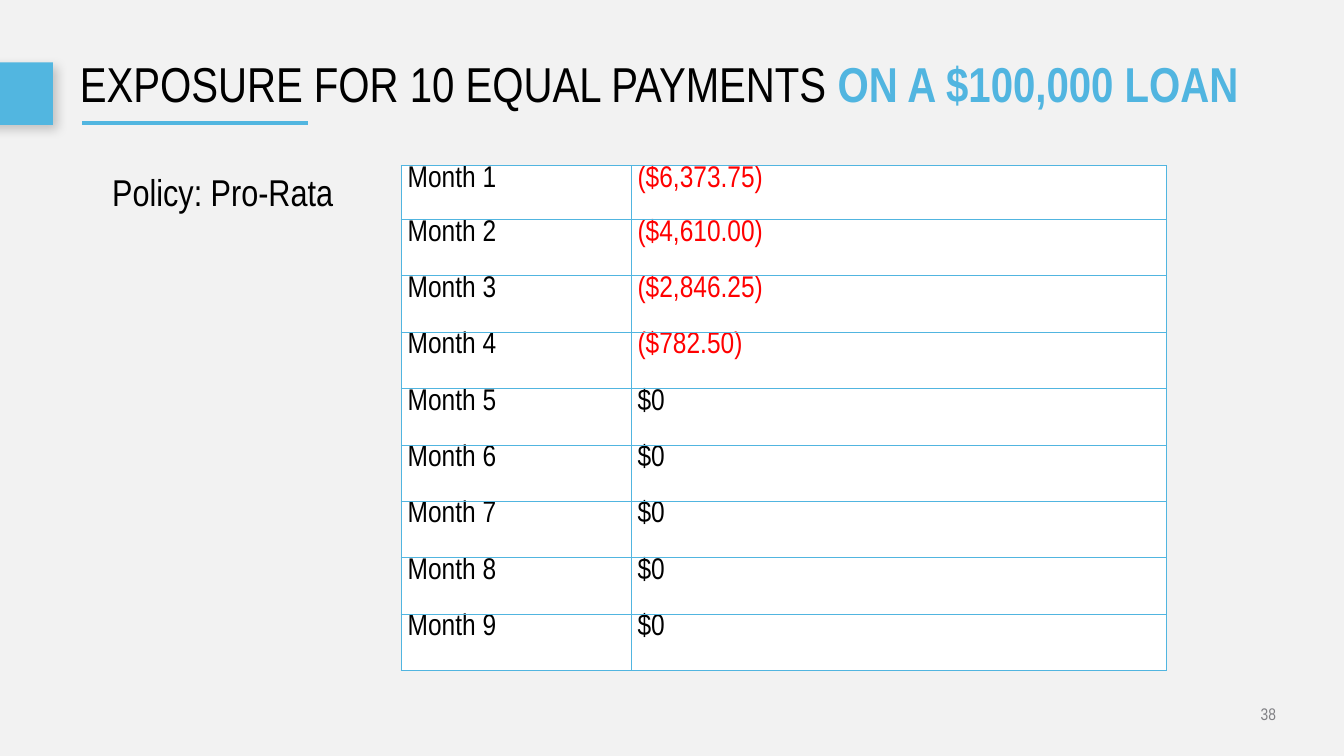
from lxml import etree
from pptx import Presentation
from pptx import util as u
from pptx.dml.color import RGBColor
from pptx.enum import shapes, text
from pptx.oxml import ns, parse_xml

HUES = {"back": "F2F2F2", "bar": "52B6E0", "blue": "51B5E0", "ink": "000000",
        "red": "FF0000", "grey": "808084", "white": "FFFFFF"}
FONT = "Arial Narrow"
LOSSES = ["($6,373.75)", "($4,610.00)", "($2,846.25)", "($782.50)"]
ROWS = [(f"Month {n + 1}", LOSSES[n] if n < len(LOSSES) else "$0") for n in range(9)]


class Deck:
    def __init__(self, wide, high):
        self.prs = Presentation()
        self.prs.slide_width, self.prs.slide_height = u.Cm(wide), u.Cm(high)
        self.slide = self.prs.slides.add_slide(self.prs.slide_layouts[5])
        self.paint(self.slide.background.fill, "back")

    def hue(self, name):
        return RGBColor.from_string(HUES[name])

    def paint(self, fill, name):
        fill.solid()
        fill.fore_color.rgb = self.hue(name)

    def style(self, run, size, name, bold=False):
        run.font.name, run.font.size, run.font.bold = FONT, u.Pt(size), bold
        run.font.color.rgb = self.hue(name)

    def inset(self, item, side, top):
        item.margin_left = item.margin_right = u.Cm(side)
        item.margin_top = item.margin_bottom = u.Cm(top)

    def title(self, box, size, parts):
        head = self.slide.shapes.title
        head.left, head.top, head.width, head.height = map(u.Cm, box)
        frame = head.text_frame
        self.inset(frame, 0, 0)
        frame.word_wrap = True
        frame.auto_size = text.MSO_AUTO_SIZE.NONE
        frame.vertical_anchor = text.MSO_ANCHOR.MIDDLE
        para = frame.paragraphs[0]
        para.alignment, para.line_spacing = text.PP_ALIGN.LEFT, 0.9
        for words, name, bold in parts:
            run = para.add_run()
            run.text = words
            self.style(run, size, name, bold)

    def block(self, box, name):
        rect = self.slide.shapes.add_shape(shapes.MSO_SHAPE.RECTANGLE, *map(u.Cm, box))
        self.paint(rect.fill, name)
        rect.line.fill.background()
        rect.shadow.inherit = False
        glow = rect._element.spPr.find(ns.qn("a:effectLst"))
        glow.append(parse_xml(
            f'<a:outerShdw {ns.nsdecls("a")} blurRad="{u.Pt(12)}" dist="{u.Pt(7)}" '
            f'dir="2700000" algn="tl" rotWithShape="0"><a:srgbClr val="{HUES["ink"]}">'
            '<a:alpha val="20000"/></a:srgbClr></a:outerShdw>'))

    def rule(self, ends, name, width):
        line = self.slide.shapes.add_connector(
            shapes.MSO_CONNECTOR.STRAIGHT, *map(u.Cm, ends))
        line.line.color.rgb = self.hue(name)
        line.line.width = u.Pt(width)
        etree.SubElement(line._element.spPr, ns.qn("a:effectLst"))

    def label(self, box, words, size, name, align="LEFT", anchor="TOP", pad=(0.25, 0.13)):
        frame = self.slide.shapes.add_textbox(*map(u.Cm, box)).text_frame
        frame.word_wrap = True
        self.inset(frame, *pad)
        frame.vertical_anchor = text.MSO_ANCHOR[anchor]
        frame.text = words
        para = frame.paragraphs[0]
        para.alignment = text.PP_ALIGN[align]
        self.style(para.runs[0], size, name)

    def edge(self, cell, name, width):
        props = cell._tc.get_or_add_tcPr()
        for spot, side in enumerate("LRTB"):
            props.insert(spot, parse_xml(
                f'<a:ln{side} {ns.nsdecls("a")} w="{u.Pt(width)}"><a:solidFill>'
                f'<a:srgbClr val="{HUES[name]}"/></a:solidFill></a:ln{side}>'))

    def table(self, spot, cols, highs, rows, size):
        box = (*spot, sum(cols), sum(highs))
        grid = self.slide.shapes.add_table(len(rows), len(cols), *map(u.Cm, box)).table
        grid.first_row = grid.horz_banding = False
        for col, wide in zip(grid.columns, cols):
            col.width = u.Cm(wide)
        for row, high, words in zip(grid.rows, highs, rows):
            row.height = u.Cm(high)
            for cell, word in zip(row.cells, words):
                cell.text = word
                self.inset(cell, 0.25, 0)
                self.paint(cell.fill, "white")
                self.edge(cell, "blue", 1)
                name = "red" if word.startswith("(") else "ink"
                self.style(cell.text_frame.paragraphs[0].runs[0], size, name)


def main():
    deck = Deck(50.8, 28.58)
    deck.block((-1.3, 2.36, 3.3, 2.36), "bar")
    deck.rule((3.1, 4.65, 11.66, 4.65), "bar", 5)
    deck.title((3.02, 1.5, 45.21, 3.58), 52.5,
               [("EXPOSURE FOR 10 EQUAL PAYMENTS ", "ink", False),
                ("ON A $100,000 LOAN", "blue", True)])
    deck.label((36.8, 26.49, 11.43, 0.97), "38", 18, "grey", "RIGHT", "MIDDLE", (0, 0))
    deck.table((15.16, 6.27), (8.69, 20.24), [2.03] + [2.13] * 8, ROWS, 32)
    deck.label((3.99, 6.27, 9.96, 1.96), "Policy: Pro-Rata", 40, "ink")
    deck.prs.save("out.pptx")


if __name__ == "__main__":
    main()
